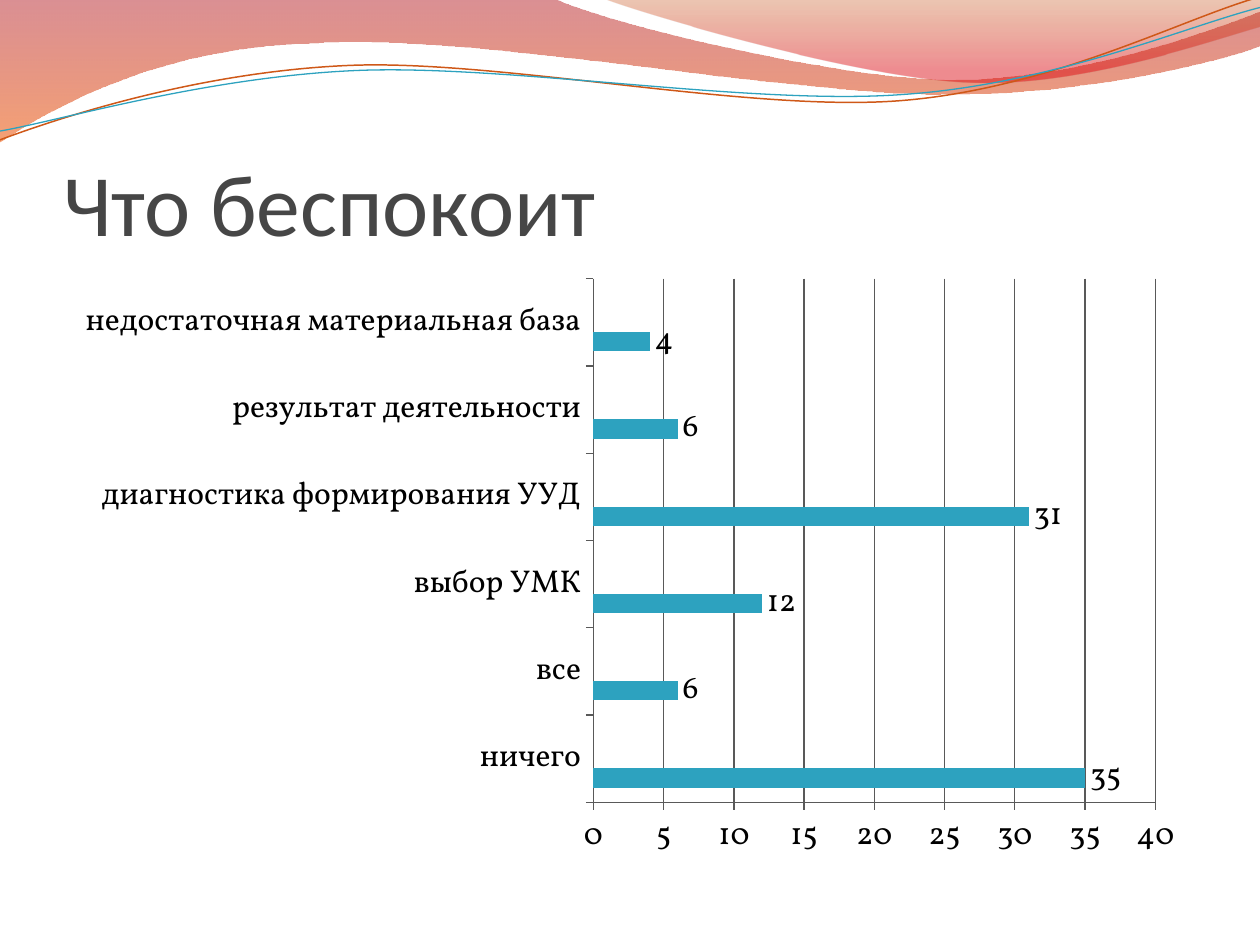
"""Build a slide with a wave header, a title and a bar chart of worries."""
from dataclasses import dataclass
from math import cos, radians, sin

from lxml.etree import SubElement as Sub
from pptx import Presentation as Deck
from pptx.chart.data import CategoryChartData as Data
from pptx.dml.color import RGBColor as Rgb
from pptx.enum.chart import XL_CHART_TYPE as Kind
from pptx.enum.chart import XL_LABEL_POSITION as Spot
from pptx.enum.chart import XL_TICK_MARK as Tick
from pptx.enum.text import MSO_ANCHOR as Anchor
from pptx.enum.text import PP_ALIGN as Align
from pptx.oxml.ns import qn
from pptx.util import Pt


@dataclass(frozen=True)
class Theme:
    """Hold colours, fonts and type sizes."""
    title: str = "464646"
    text: str = "000000"
    grid: str = "595959"
    bars: tuple = ("2DA2BF", "DA1F28", "EB641B")
    head: str = "Calibri"
    body: str = "Vollkorn"
    big: int = 50
    small: int = 18


LOOK = Theme()
TITLE = "Что беспокоит"
WORRIES = [
    ("ничего", 35),
    ("все", 6),
    ("выбор УМК", 12),
    ("диагностика формирования УУД", 31),
    ("результат деятельности", 6),
    ("недостаточная материальная база", 4),
]
BANDS = [
    ([(0, 0), (316.8, -0.7), (342.7, 12.2, 478.1, 45.4, 545.8, 45.4),
      (614.2, 45.4, 689.8, 18.7, 720, 6.5), (720.7, 25.9),
      (707.8, 31.7, 626.4, 54.7, 537.1, 54), (447.8, 54, 275, 20.2, 185, 24.5),
      (92.9, 25.9, 33.1, 59.8, -0.7, 81.4)],
     [(0, "AF0911", 45), (1, "EE5300", 55)]),
    ([(344.9, -0.7), (366.5, 7.9, 491, 44.6, 553.7, 46.8),
      (616.3, 49.7, 691.9, 23, 720, 15.1), (720, 0)],
     [(0, "C24400", 30), (0.8, "DC000B", 45)]),
]
LINES = [
    ([(0, 79.9), (34.6, 67, 113.8, 41, 199.4, 37.4),
      (284.4, 33.8, 427, 64.1, 513.4, 57.6),
      (599.8, 51.1, 675.4, 10.8, 718.6, -1.4)], "CF5818", 0.85),
    ([(0, 74.9), (33.8, 69.1, 118.1, 43.9, 203.8, 40.3),
      (290.2, 36.7, 429.8, 60.5, 516.2, 54),
      (601.9, 48.2, 677.5, 15.1, 720, 4.3)], "2DA2BF", 0.75),
]
TILT = 2.7
HUB = (359.5, 41.8)


def turn(x, y):
    """Rotate a point clockwise about the hub by the tilt."""
    angle = radians(TILT)
    dx, dy = x - HUB[0], y - HUB[1]
    return (HUB[0] + dx * cos(angle) - dy * sin(angle),
            HUB[1] + dx * sin(angle) + dy * cos(angle))


def outline(shapes, route, close, move=lambda x, y: (x, y)):
    """Add a freeform whose six-number legs are cubic curves."""
    dots = [tuple(Pt(v) for v in move(*leg[at:at + 2]))
            for leg in route for at in range(0, len(leg), 2)]
    pen = shapes.build_freeform(*dots[0])
    pen.add_line_segments(dots[1:], close=close)
    shape = pen.convert_to_shape()
    shape.shadow.inherit = False
    nodes = iter(list(shape.element.iter(qn("a:lnTo"))))
    for leg in route[1:]:
        first = next(nodes)
        if len(leg) == 6:
            first.tag = qn("a:cubicBezTo")
            for node in (next(nodes), next(nodes)):
                first.append(node[0])
                node.getparent().remove(node)
    return shape


def band(shapes, route, stops):
    """Add a closed wave with a see-through gradient."""
    shape = outline(shapes, route, True)
    shape.line.fill.background()
    shape.fill.gradient()
    shape.fill.gradient_angle = 270
    for stop, (place, tint, _) in zip(shape.fill.gradient_stops, stops):
        stop.position = place
        stop.color.rgb = Rgb.from_string(tint)
    for node, (_, _, alpha) in zip(shape.element.iter(qn("a:srgbClr")), stops):
        Sub(node, qn("a:alpha")).set("val", str(alpha * 1000))


def strand(shapes, route, tint, width):
    """Add an open, tilted wave line."""
    shape = outline(shapes, route, False, turn)
    shape.rotation = 360 - TILT
    shape.fill.background()
    shape.line.color.rgb = Rgb.from_string(tint)
    shape.line.width = Pt(width)


def style(font, face, size, tint):
    """Set face, size and colour of a font."""
    font.name = face
    font.size = Pt(size)
    font.bold = False
    font.color.rgb = Rgb.from_string(tint)


def write(shape, text, *, face, size, tint, align, anchor):
    """Put formatted text into a shape."""
    frame = shape.text_frame
    frame.word_wrap = True
    frame.vertical_anchor = anchor
    frame.margin_left = frame.margin_right = frame.margin_bottom = 0
    frame.margin_top = Pt(3.6)
    para = frame.paragraphs[0]
    para.alignment = align
    run = para.add_run()
    run.text = text
    style(run.font, face, size, tint)


def plot(shapes):
    """Add the bar chart."""
    data = Data()
    data.categories = [name for name, _ in WORRIES]
    data.add_series("Series 1", [value for _, value in WORRIES])
    for name in ("Series 2", "Series 3"):
        data.add_series(name, [None] * len(WORRIES))
    chart = shapes.add_chart(Kind.BAR_CLUSTERED, Pt(36), Pt(152.4),
                             Pt(648), Pt(345.6), data).chart
    style(chart.font, LOOK.body, LOOK.small, LOOK.text)
    chart.has_legend = chart.has_title = False
    bars = chart.plots[0]
    bars.gap_width = 150
    bars.vary_by_categories = False
    for row, tint in zip(bars.series, LOOK.bars):
        row.format.fill.solid()
        row.format.fill.fore_color.rgb = Rgb.from_string(tint)
    tags = bars.series[0].data_labels
    tags.show_value = True
    tags.position = Spot.OUTSIDE_END
    style(tags.font, LOOK.body, LOOK.small, LOOK.text)
    scale = chart.value_axis
    scale.minimum_scale, scale.maximum_scale, scale.major_unit = 0, 40, 5
    scale.has_major_gridlines = True
    chart.category_axis.has_major_gridlines = False
    for axis in (scale, chart.category_axis):
        axis.major_tick_mark = Tick.OUTSIDE
        axis.minor_tick_mark = Tick.NONE
    for part in (scale, scale.major_gridlines, chart.category_axis):
        part.format.line.color.rgb = Rgb.from_string(LOOK.grid)
        part.format.line.width = Pt(0.75)


def main():
    """Build and save the deck."""
    deck = Deck()
    deck.slide_width, deck.slide_height = Pt(720), Pt(540)
    shapes = deck.slides.add_slide(deck.slide_layouts[5]).shapes
    for route, stops in BANDS:
        band(shapes, route, stops)
    group = shapes.add_group_shape()
    for route, tint, width in LINES:
        strand(group.shapes, route, tint, width)
    head = shapes.title
    head.left, head.top = Pt(36), Pt(55.44)
    head.width, head.height = Pt(648), Pt(90)
    write(head, TITLE, face=LOOK.head, size=LOOK.big, tint=LOOK.title,
          align=Align.LEFT, anchor=Anchor.BOTTOM)
    plot(shapes)
    deck.save("out.pptx")


if __name__ == "__main__":
    main()
